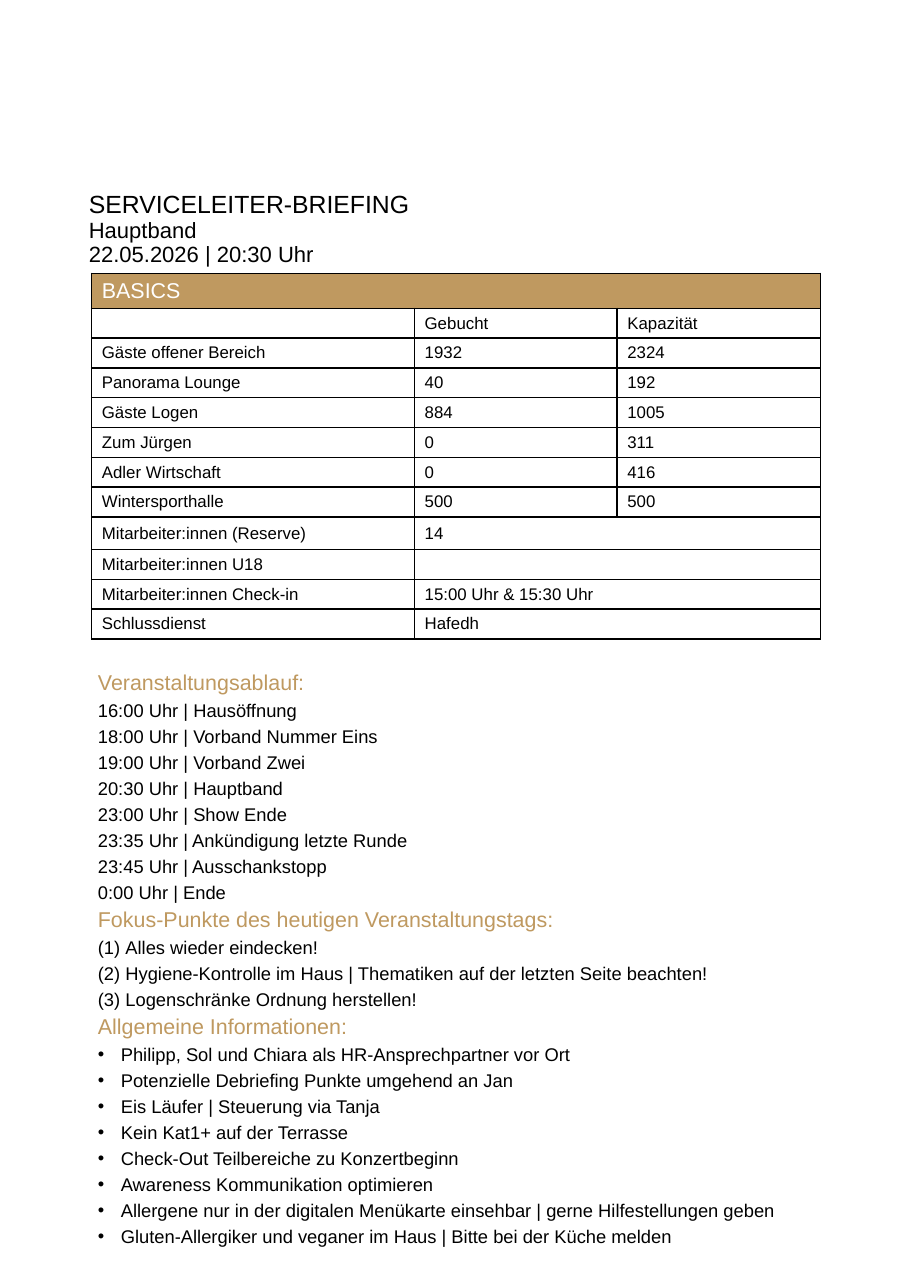
from lxml.etree import SubElement
from pptx import Presentation
from pptx.dml.color import RGBColor
from pptx.enum.text import MSO_ANCHOR as Anchor
from pptx.oxml.ns import qn
from pptx.util import Pt

COLORS = {"gold": "BF9960", "black": "000000", "white": "FFFFFF"}
FONT = "Arial"

TITLE = [
    ("SERVICELEITER-BRIEFING", 16.2),
    ("Hauptband", 14.4),
    ("22.05.2026 | 20:30 Uhr", 14.4),
]

BASICS = [
    ("BASICS",),
    ("", "Gebucht", "Kapazität"),
    ("Gäste offener Bereich", "1932", "2324"),
    ("Panorama Lounge", "40", "192"),
    ("Gäste Logen", "884", "1005"),
    ("Zum Jürgen", "0", "311"),
    ("Adler Wirtschaft", "0", "416"),
    ("Wintersporthalle", "500", "500"),
    ("Mitarbeiter:innen (Reserve)", "14"),
    ("Mitarbeiter:innen U18", ""),
    ("Mitarbeiter:innen Check-in", "15:00 Uhr & 15:30 Uhr"),
    ("Schlussdienst", "Hafedh"),
]
COL_WIDTHS = (211, 132.5, 133)
ROW_HEIGHT = 19.5
TALL_ROWS = {0: 22.9, 8: 21.3}

SECTIONS = [
    ("Veranstaltungsablauf:", None, [
        "16:00 Uhr | Hausöffnung",
        "18:00 Uhr | Vorband Nummer Eins",
        "19:00 Uhr | Vorband Zwei",
        "20:30 Uhr | Hauptband",
        "23:00 Uhr | Show Ende",
        "23:35 Uhr | Ankündigung letzte Runde",
        "23:45 Uhr | Ausschankstopp",
        "0:00 Uhr | Ende",
    ]),
    ("Fokus-Punkte des heutigen Veranstaltungstags:", "number", [
        "Alles wieder eindecken!",
        "Hygiene-Kontrolle im Haus | Thematiken auf der letzten Seite beachten!",
        "Logenschränke Ordnung herstellen!",
    ]),
    ("Allgemeine Informationen:", "bullet", [
        "Philipp, Sol und Chiara als HR-Ansprechpartner vor Ort",
        "Potenzielle Debriefing Punkte umgehend an Jan",
        "Eis Läufer | Steuerung via Tanja",
        "Kein Kat1+ auf der Terrasse",
        "Check-Out Teilbereiche zu Konzertbeginn",
        "Awareness Kommunikation optimieren",
        "Allergene nur in der digitalen Menükarte einsehbar | gerne Hilfestellungen geben",
        "Gluten-Allergiker und veganer im Haus | Bitte bei der Küche melden",
    ]),
]
LISTS = {
    "number": (18, "a:buAutoNum", {"type": "arabicParenBoth"}),
    "bullet": (15, "a:buChar", {"char": "•"}),
}


def add_run(p, text, size, color):
    r = p.add_run()
    r.text = text
    for name, value in {"name": FONT, "size": Pt(size)}.items():
        setattr(r.font, name, value)
    r.font.color.rgb = RGBColor.from_string(COLORS[color])


def add_box(s, x, y, w, h, anchor):
    tf = s.shapes.add_textbox(Pt(x), Pt(y), Pt(w), Pt(h)).text_frame
    for name, value in {"word_wrap": True, "vertical_anchor": anchor}.items():
        setattr(tf, name, value)
    return tf


def add_title(s):
    p = add_box(s, 51, 121.7, 481.7, 56.9, Anchor.MIDDLE).paragraphs[0]
    p.line_spacing = 0.9
    for i, (text, size) in enumerate(TITLE):
        if i:
            p.add_line_break()
        add_run(p, text, size, "black")


def add_border(cell):
    tc_pr = cell._tc.get_or_add_tcPr()
    for side in "LRTB":
        ln = SubElement(tc_pr, qn(f"a:ln{side}"), w=str(Pt(1)))
        fill = SubElement(ln, qn("a:solidFill"))
        SubElement(fill, qn("a:srgbClr"), val=COLORS["black"])


def fill_cell(cell, text, header):
    margins = {"margin_left": 6.8, "margin_right": 6.8, "margin_top": 2.8, "margin_bottom": 2.8}
    for name, value in margins.items():
        setattr(cell, name, Pt(value))
    cell.vertical_anchor = Anchor.MIDDLE
    add_border(cell)
    if header:
        cell.fill.solid()
        cell.fill.fore_color.rgb = RGBColor.from_string(COLORS["gold"])
    else:
        cell.fill.background()
    p = cell.text_frame.paragraphs[0]
    if text:
        add_run(p, text, 14 if header else 11, "white" if header else "black")
    else:
        SubElement(p._p, qn("a:endParaRPr"), sz="1100")


def add_basics(s):
    heights = [TALL_ROWS.get(i, ROW_HEIGHT) for i in range(len(BASICS))]
    last = len(COL_WIDTHS) - 1
    frame = s.shapes.add_table(len(BASICS), last + 1, Pt(59.8), Pt(178.6),
                               Pt(sum(COL_WIDTHS)), Pt(sum(heights)))
    table = frame.table
    for name in ("first_row", "horz_banding"):
        setattr(table, name, False)
    for col, width in zip(table.columns, COL_WIDTHS):
        col.width = Pt(width)
    for i, values in enumerate(BASICS):
        table.rows[i].height = Pt(heights[i])
        end = len(values) - 1
        if end < last:
            table.cell(i, end).merge(table.cell(i, last))
        for j, text in enumerate(values):
            fill_cell(table.cell(i, j), text, i == 0)


def add_sections(s):
    tf = add_box(s, 56.9, 435.6, 481.7, 388, Anchor.TOP)
    lines = []
    for heading, kind, items in SECTIONS:
        lines.append((heading, None, 14, "gold"))
        lines += [(item, kind, 12, "black") for item in items]
    for i, (text, kind, size, color) in enumerate(lines):
        p = tf.add_paragraph() if i else tf.paragraphs[0]
        spacing = {"line_spacing": 0.9, "space_before": Pt(2 if i else 0), "space_after": Pt(2)}
        for name, value in spacing.items():
            setattr(p, name, value)
        if kind:
            indent, tag, attrs = LISTS[kind]
            p_pr = p._p.get_or_add_pPr()
            p_pr.set("marL", str(Pt(indent)))
            p_pr.set("indent", str(Pt(-indent)))
            SubElement(p_pr, qn("a:buFont"), typeface=FONT)
            SubElement(p_pr, qn(tag), attrs)
        add_run(p, text, size, color)


def main():
    """Build the one-page service briefing."""
    prs = Presentation()
    prs.slide_width, prs.slide_height = Pt(595.44), Pt(841.68)
    s = prs.slides.add_slide(prs.slide_layouts[6])
    add_title(s)
    add_sections(s)
    add_basics(s)
    prs.save("out.pptx")


if __name__ == "__main__":
    main()
